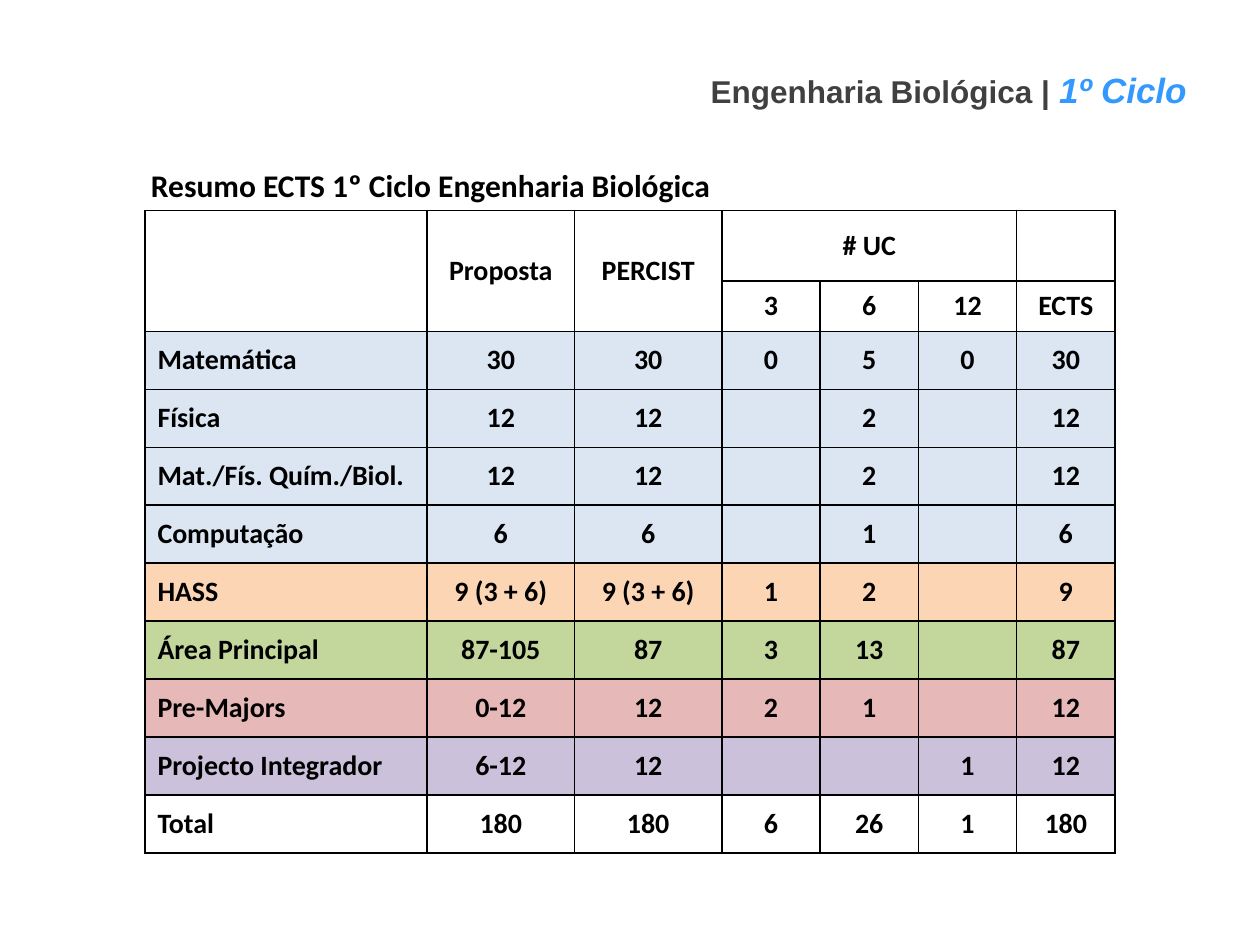
import pptx
import pptx.dml.color
import pptx.enum.text
import pptx.oxml
import pptx.oxml.ns
import pptx.util

RGBColor = pptx.dml.color.RGBColor
ALIGN = pptx.enum.text.PP_ALIGN
MIDDLE = pptx.enum.text.MSO_ANCHOR.MIDDLE

BLACK = RGBColor(0x00, 0x00, 0x00)
WHITE = RGBColor(0xFF, 0xFF, 0xFF)
GREY = RGBColor(0x40, 0x40, 0x40)
AZURE = RGBColor(0x33, 0x99, 0xFF)
BLUE = RGBColor(0xDC, 0xE6, 0xF2)
ORANGE = RGBColor(0xFC, 0xD5, 0xB5)
GREEN = RGBColor(0xC3, 0xD6, 0x9B)
RED = RGBColor(0xE6, 0xB9, 0xB8)
PURPLE = RGBColor(0xCC, 0xC1, 0xDA)

HEADER = [
    (WHITE, ["", "Proposta", "PERCIST", "# UC", "", "", ""]),
    (WHITE, ["", "", "", "3", "6", "12", "ECTS"]),
]
AREAS = [
    (BLUE, ["Matemática", "30", "30", "0", "5", "0", "30"]),
    (BLUE, ["Física", "12", "12", "", "2", "", "12"]),
    (BLUE, ["Mat./Fís. Quím./Biol.", "12", "12", "", "2", "", "12"]),
    (BLUE, ["Computação", "6", "6", "", "1", "", "6"]),
    (ORANGE, ["HASS", "9 (3 + 6)", "9 (3 + 6)", "1", "2", "", "9"]),
    (GREEN, ["Área Principal", "87-105", "87", "3", "13", "", "87"]),
    (RED, ["Pre-Majors", "0-12", "12", "2", "1", "", "12"]),
    (PURPLE, ["Projecto Integrador", "6-12", "12", "", "", "1", "12"]),
    (WHITE, ["Total", "180", "180", "6", "26", "1", "180"]),
]
MERGES = [((0, 0), (1, 0)), ((0, 1), (1, 1)), ((0, 2), (1, 2)), ((0, 3), (0, 5))]


class SlideBuilder:
    columns, rows = 100, 75
    body_font = "Calibri"
    border_width = pptx.util.Pt(1)

    def __init__(self, prs):
        self.prs = prs
        self.s = prs.slides.add_slide(prs.slide_layouts[6])

    def x(self, n):
        return round(self.prs.slide_width * n / self.columns)

    def y(self, n):
        return round(self.prs.slide_height * n / self.rows)

    def run(self, p, text, size, color=BLACK, font=body_font, italic=None):
        r = p.add_run()
        r.text = text
        r.font.name = font
        r.font.size = pptx.util.Pt(size)
        r.font.bold = True
        r.font.italic = italic
        r.font.color.rgb = color

    def heading(self, left, top, width, height, align):
        sp = self.s.shapes.add_textbox(self.x(left), self.y(top), self.x(width), self.y(height))
        tf = sp.text_frame
        tf.word_wrap = True
        tf.vertical_anchor = MIDDLE
        p = tf.paragraphs[0]
        p.alignment = align
        p.line_spacing = 1.5
        return p

    def border(self, cell):
        tcPr = cell._tc.get_or_add_tcPr()
        for i, side in enumerate(("lnL", "lnR", "lnT", "lnB")):
            tcPr.insert(i, pptx.oxml.parse_xml(
                f'<a:{side} {pptx.oxml.ns.nsdecls("a")} w="{self.border_width}">'
                f'<a:solidFill><a:srgbClr val="{BLACK}"/></a:solidFill></a:{side}>'))

    def table(self, left, top, widths, heights, data, merges):
        frame = self.s.shapes.add_table(
            len(heights), len(widths), self.x(left), self.y(top),
            self.x(sum(widths)), self.y(sum(heights)))
        table = frame.table
        table.first_row = table.horz_banding = False
        for column, width in zip(table.columns, widths):
            column.width = self.x(width)
        for row, height in zip(table.rows, heights):
            row.height = self.y(height)
        for row, (color, texts) in zip(table.rows, data):
            for i, (cell, text) in enumerate(zip(row.cells, texts)):
                cell.fill.solid()
                cell.fill.fore_color.rgb = color
                cell.vertical_anchor = MIDDLE
                self.border(cell)
                p = cell.text_frame.paragraphs[0]
                p.alignment = ALIGN.CENTER if i else ALIGN.LEFT
                if text:
                    self.run(p, text, 16)
        for first, last in merges:
            table.cell(*first).merge(table.cell(*last))


def main():
    prs = pptx.Presentation()
    prs.slide_width = pptx.util.Inches(10)
    prs.slide_height = pptx.util.Inches(7.5)
    slide = SlideBuilder(prs)

    p = slide.heading(50.6, 2.9, 49.4, 6.8, ALIGN.CENTER)
    slide.run(p, "Engenharia Biológica | ", 18, GREY, "Arial")
    slide.run(p, "1º Ciclo", 20, AZURE, "Arial", True)

    widths = [22.4] + [11.7] * 2 + [7.8] * 4
    heights = [5.6, 3.2] + [4.6] * len(AREAS)
    slide.table(11.5, 16.7, widths, heights, HEADER + AREAS, MERGES)

    p = slide.heading(11, 10.5, 49.4, 6.8, ALIGN.LEFT)
    slide.run(p, "Resumo ECTS 1º Ciclo Engenharia Biológica", 18)

    prs.save("out.pptx")


if __name__ == "__main__":
    main()
